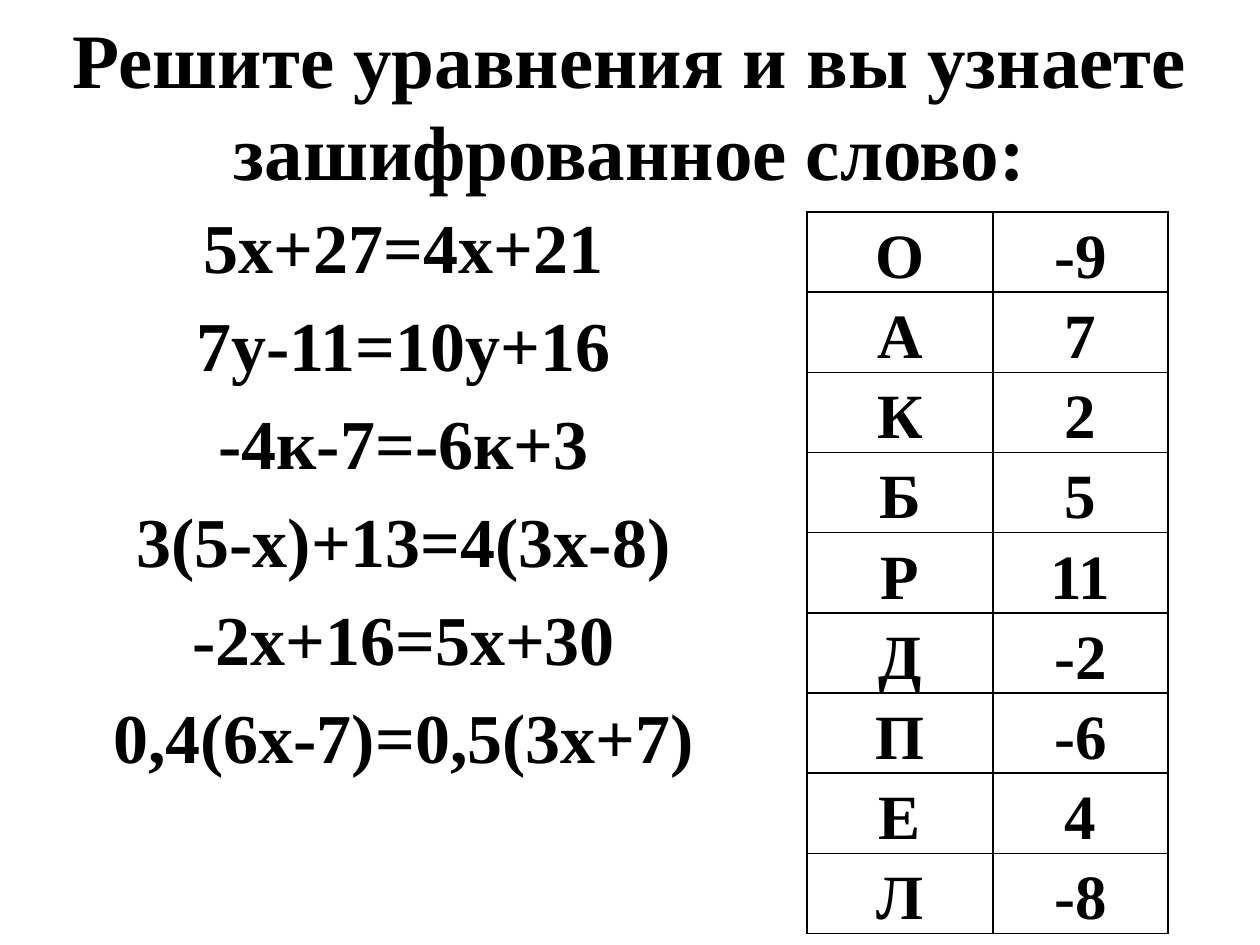
"""Build a slide with equations to solve and a letter key table."""
import pptx
import pptx.util
import pptx.dml.color
import pptx.enum.text
import pptx.oxml

PX = 914400 // 126
BLACK = pptx.dml.color.RGBColor(0, 0, 0)
FONT = "Times New Roman"
EQUATIONS = ["5х+27=4х+21", "7у-11=10у+16", "-4к-7=-6к+3",
             "3(5-х)+13=4(3х-8)", "-2х+16=5х+30", "0,4(6х-7)=0,5(3х+7)"]
KEY = [("О", "-9"), ("А", "7"), ("К", "2"), ("Б", "5"), ("Р", "11"),
       ("Д", "-2"), ("П", "-6"), ("Е", "4"), ("Л", "-8")]
BORDER = ('<a:{} xmlns:a="http://schemas.openxmlformats.org/drawingml/2006/main" w="12700">'
          '<a:solidFill><a:srgbClr val="{}"/></a:solidFill></a:{}>')


def place(shape, left, top, width, height):
    shape.left, shape.top = left * PX, top * PX
    shape.width, shape.height = width * PX, height * PX


def add_text(p, text, size):
    p.alignment = pptx.enum.text.PP_ALIGN.CENTER
    r = p.add_run()
    r.text = text
    r.font.name = FONT
    r.font.size = pptx.util.Pt(size)
    r.font.bold = True
    r.font.color.rgb = BLACK


prs = pptx.Presentation()
prs.slide_width, prs.slide_height = 1260 * PX, 945 * PX
s = prs.slides.add_slide(prs.slide_layouts[0])

title = s.shapes.title
place(title, 0, 0, 1260, 207)
title.text_frame.vertical_anchor = pptx.enum.text.MSO_ANCHOR.MIDDLE
add_text(title.text_frame.paragraphs[0],
         "Решите уравнения и вы узнаете зашифрованное слово:", 44)

body = s.placeholders[1]
place(body, 0, 197, 807, 610)
tf = body.text_frame
for i, equation in enumerate(EQUATIONS):
    p = tf.add_paragraph() if i else tf.paragraphs[0]
    add_text(p, equation, 40)

frame = s.shapes.add_table(len(KEY), 2, 807 * PX, 212 * PX, 361 * PX, 722 * PX)
table = frame.table
table.first_row = False
table.horz_banding = False
table.columns[0].width, table.columns[1].width = 186 * PX, 175 * PX
for row, values in zip(table.rows, KEY):
    row.height = 78 * PX
    for cell, value in zip(row.cells, values):
        cell.margin_left = cell.margin_right = 9 * PX
        cell.margin_top = cell.margin_bottom = 0
        p = cell.text_frame.paragraphs[0]
        p.line_spacing = 1.15
        add_text(p, value, 36)
        tcPr = cell._tc.get_or_add_tcPr()
        for side in ("lnL", "lnR", "lnT", "lnB"):
            tcPr.append(pptx.oxml.parse_xml(BORDER.format(side, BLACK, side)))
        cell.fill.background()

prs.save("out.pptx")
